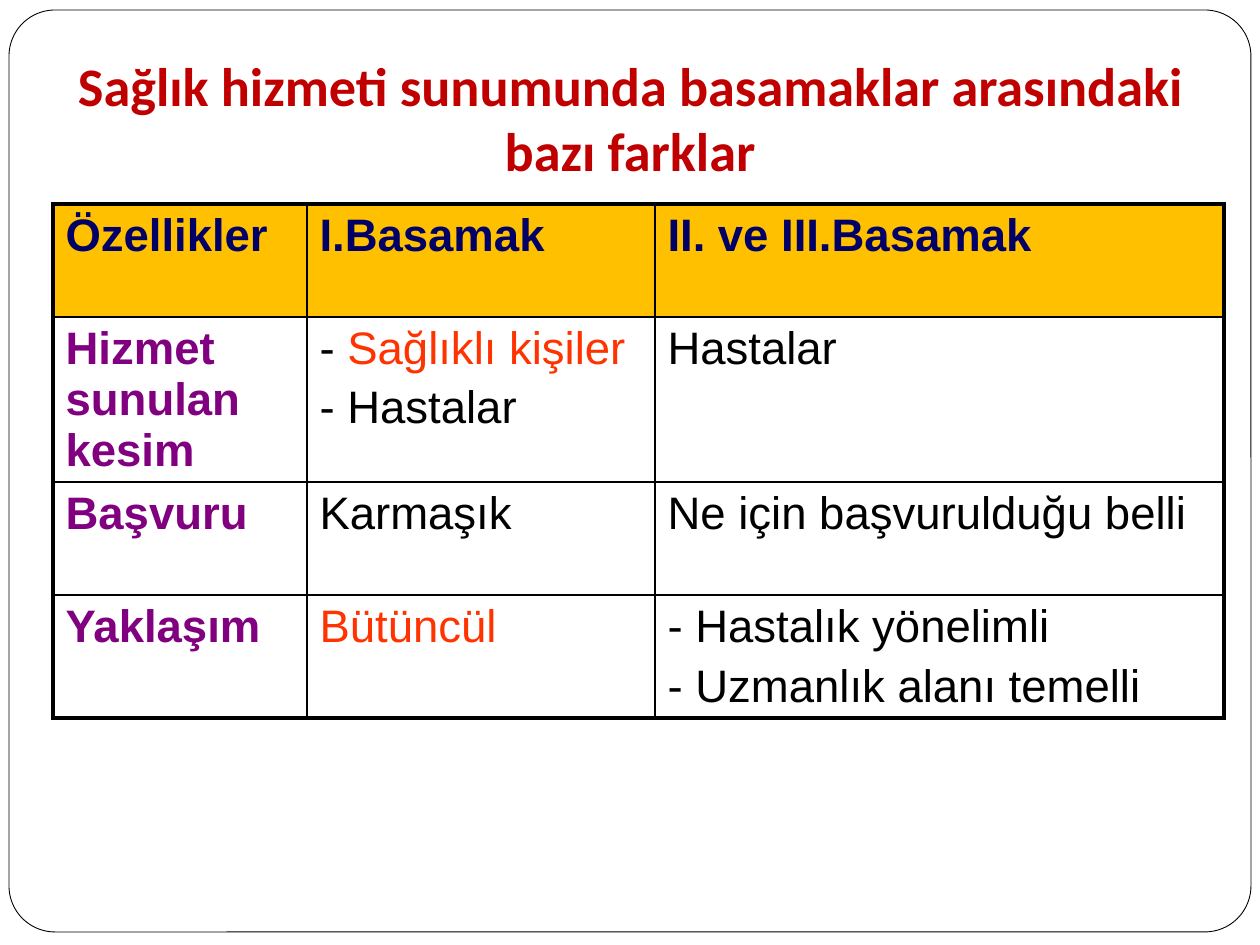
from lxml import etree
from pptx import Presentation, util as u
from pptx.dml.color import RGBColor
from pptx.enum import shapes, text
from pptx.oxml.ns import qn

TITLE = "Sağlık hizmeti sunumunda basamaklar arasındaki bazı farklar"
ROWS = [
    [[[("Özellikler", "head")]], [[("I.Basamak", "head")]],
     [[("II. ve III.Basamak", "head")]]],
    [[[("Hizmet sunulan kesim", "label")]],
     [[("- ", "body"), ("Sağlıklı kişiler", "accent")], [("- Hastalar", "body")]],
     [[("Hastalar", "body")]]],
    [[[("Başvuru", "label")]], [[("Karmaşık", "body")]],
     [[("Ne için başvurulduğu belli", "body")]]],
    [[[("Yaklaşım", "label")]], [[("Bütüncül", "accent")]],
     [[("- Hastalık yönelimli", "body")], [("- Uzmanlık alanı temelli", "body")]]],
]
COLS = [254, 348, 569]
HIGH = 113
THEME = {
    "title": {"name": "Calibri", "size": 31, "bold": True, "color": "C00000"},
    "head": {"name": "Arial", "size": 26, "bold": True, "color": "000066"},
    "label": {"name": "Arial", "size": 26, "bold": True, "color": "800080"},
    "body": {"name": "Arial", "size": 26, "bold": False, "color": "000000"},
    "accent": {"name": "Arial", "size": 26, "bold": False, "color": "FF3300"},
    "paper": "FFFFFF", "band": "FFC000", "ink": "000000",
    "thin": 1, "thick": 2.25, "edge": 0.5, "gap": 5,
}


def px(n):
    return u.Emu(round(n * 914400 / 126))


def rgb(key):
    return RGBColor.from_string(THEME[key])


def style(run, role):
    form = dict(THEME[role])
    run.font.color.rgb = RGBColor.from_string(form.pop("color"))
    form["size"] = u.Pt(form["size"])
    for key, val in form.items():
        setattr(run.font, key, val)


def write(par, runs):
    for words, role in runs:
        run = par.add_run()
        run.text = words
        style(run, role)


def border(cell, outer):
    props = cell._tc.get_or_add_tcPr()
    for spot, side in enumerate("LRTB"):
        width = THEME["thick" if side in outer else "thin"]
        line = etree.Element(qn("a:ln" + side), w=str(u.Pt(width)))
        fill = etree.SubElement(line, qn("a:solidFill"))
        etree.SubElement(fill, qn("a:srgbClr"), val=THEME["ink"])
        props.insert(spot, line)


def add_frame(slide):
    frame = slide.shapes.add_shape(
        shapes.MSO_SHAPE.ROUNDED_RECTANGLE, px(9), px(10), px(1242), px(922))
    frame.adjustments[0] = 0.05
    frame.shadow.inherit = False
    frame.fill.solid()
    frame.fill.fore_color.rgb = rgb("paper")
    frame.line.color.rgb = rgb("ink")
    frame.line.width = u.Pt(THEME["edge"])
    slide.shapes._spTree.insert(2, frame._element)


def add_title(slide):
    title = slide.shapes.title
    box = {"left": 63, "top": 38, "width": 1134, "height": 157}
    for key, val in box.items():
        setattr(title, key, px(val))
    form = {"vertical_anchor": text.MSO_ANCHOR.BOTTOM, "word_wrap": True,
            "auto_size": text.MSO_AUTO_SIZE.NONE, "margin_bottom": u.Inches(0.1)}
    for key, val in form.items():
        setattr(title.text_frame, key, val)
    par = title.text_frame.paragraphs[0]
    par.alignment = text.PP_ALIGN.CENTER
    write(par, [(TITLE, "title")])


def add_grid(slide):
    table = slide.shapes.add_table(
        len(ROWS), len(COLS), px(53), px(204), px(sum(COLS)), px(HIGH * len(ROWS))).table
    table.first_row = table.horz_banding = False
    for col, wide in zip(table.columns, COLS):
        col.width = px(wide)
    for r, row in enumerate(ROWS):
        table.rows[r].height = px(HIGH)
        for c, pars in enumerate(row):
            cell = table.cell(r, c)
            if r == 0:
                cell.fill.solid()
                cell.fill.fore_color.rgb = rgb("band")
            else:
                cell.fill.background()
            edges = {"L": c == 0, "R": c == len(COLS) - 1,
                     "T": r == 0, "B": r == len(ROWS) - 1}
            border(cell, [side for side, on in edges.items() if on])
            frame = cell.text_frame
            for i, runs in enumerate(pars):
                par = frame.add_paragraph() if i else frame.paragraphs[0]
                par.space_before = u.Pt(THEME["gap"])
                write(par, runs)


def main():
    deck = Presentation()
    deck.slide_width, deck.slide_height = px(1260), px(945)
    slide = deck.slides.add_slide(deck.slide_layouts[5])
    add_frame(slide)
    add_title(slide)
    add_grid(slide)
    deck.save("out.pptx")


if __name__ == "__main__":
    main()
